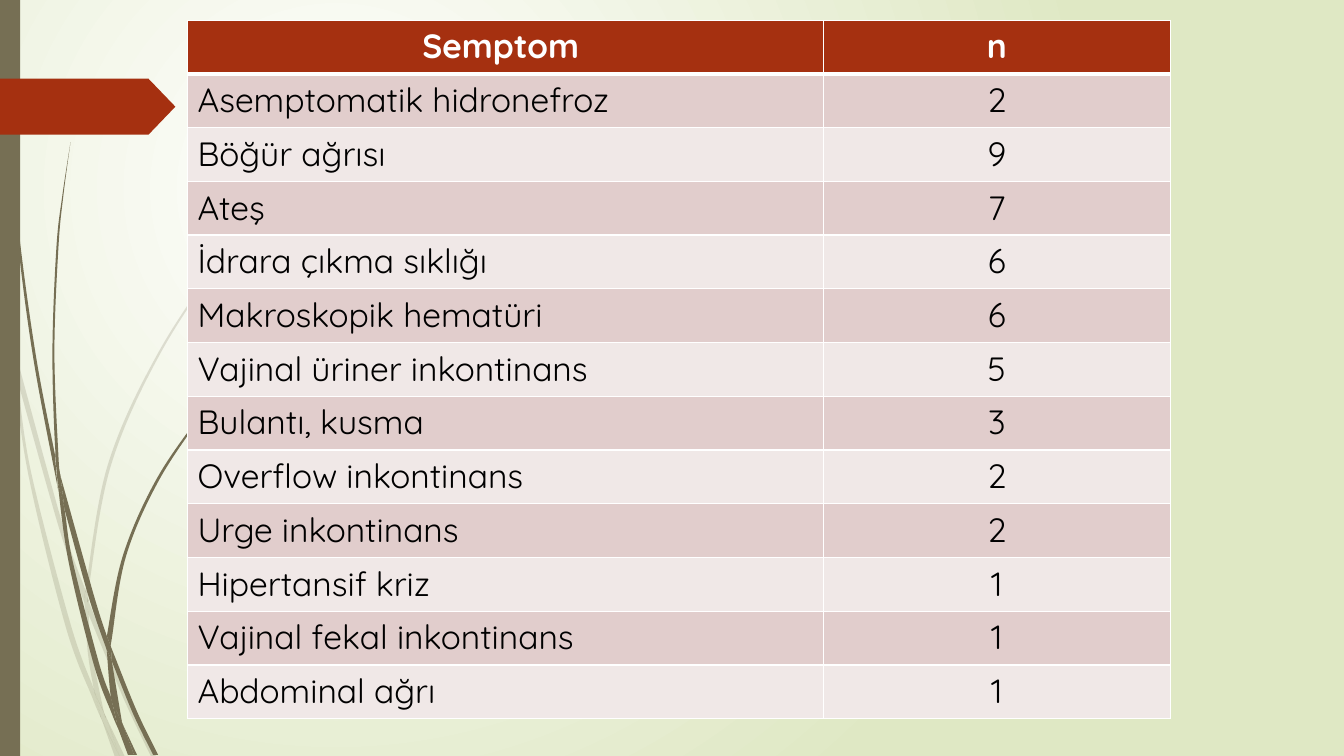
from lxml.etree import SubElement
from pptx import Presentation
from pptx.dml.color import RGBColor
from pptx.enum.shapes import MSO_SHAPE
from pptx.enum.text import PP_ALIGN
from pptx.oxml.ns import qn
from pptx.util import Pt

RECT, ARROW = MSO_SHAPE.RECTANGLE, MSO_SHAPE.PENTAGON
LEFT, CENTER = PP_ALIGN.LEFT, PP_ALIGN.CENTER
UNIT = 0.72

COLORS = {
    "white": "FFFFFF", "black": "000000", "green": "DFE8C4",
    "olive": "766F54", "rust": "A53010", "rose": "E1CDCC", "pale": "F0E8E7",
}
ROWS = [
    ("Semptom ", "n"),
    ("Asemptomatik hidronefroz", "2"),
    ("Böğür ağrısı", "9"),
    ("Ateş", "7"),
    ("İdrara çıkma sıklığı", "6"),
    ("Makroskopik hematüri", "6"),
    ("Vajinal üriner inkontinans", "5"),
    ("Bulantı, kusma", "3"),
    ("Overflow inkontinans", "2"),
    ("Urge inkontinans", "2"),
    ("Hipertansif kriz", "1"),
    ("Vajinal fekal inkontinans", "1"),
    ("Abdominal ağrı", "1"),
]
FAINT = [
    [[(0, 282), (9, 322), (11, 350)], [(10, 344), (0, 299)], [(0, 282)]],
    [[(14, 345), (17, 376)], [(58, 522), (84, 599)], [(85, 586)], [(62, 520), (14, 345)]],
    [[(88, 596), (88, 610)], [(123, 694), (150, 751)], [(155, 751)],
     [(127, 692), (92, 607), (88, 596)]],
    [[(105, 711), (119, 751)], [(124, 751)], [(105, 711)]],
    [[(11, 350), (28, 470), (65, 621), (92, 693), (101, 714)], [(99, 707), (93, 683)],
     [(70, 619), (31, 469), (17, 376), (11, 350)]],
    [[(84, 599), (87, 646), (93, 683), (96, 692), (105, 711)],
     [(103, 706), (91, 646), (88, 610), (88, 608)], [(84, 599)]],
    [[(312, 153), (289, 175), (268, 197), (228, 244), (158, 348), (107, 461), (85, 584),
      (85, 586)], [(88, 596)],
     [(88, 584), (110, 462), (160, 349), (229, 245), (268, 198), (290, 175), (312, 154)],
     [(312, 153)]],
    [[(101, 714), (114, 751)], [(119, 751)], [(101, 714)]],
    [[(88, 608), (88, 610)], [(88, 596)], [(85, 586)], [(84, 599)], [(88, 608)]],
    [[(93, 683), (99, 707), (101, 714), (119, 751)], [(105, 711), (96, 692), (93, 683)]],
]
SOLID = [
    [[(3, 0), (4, 48), (7, 110), (17, 233), (33, 355), (56, 477), (57, 481)],
     [(55, 457), (55, 453)], [(36, 355), (19, 232), (8, 109), (5, 48), (4, 0)], [(3, 0)]],
    [[(60, 472), (64, 505)], [(88, 592), (106, 645)], [(106, 633), (106, 631)],
     [(93, 590), (60, 472)]],
    [[(110, 641), (111, 656)], [(132, 708), (152, 749)], [(157, 749)],
     [(136, 706), (113, 649), (110, 641)]],
    [[(57, 477), (68, 557), (93, 659), (111, 708), (117, 722)], [(116, 717), (110, 691)],
     [(98, 657), (72, 556), (64, 505), (57, 477)]],
    [[(70, 141), (62, 193), (56, 245), (52, 349), (55, 449), (60, 472)],
     [(58, 453), (54, 349), (58, 245), (63, 193), (70, 141)]],
    [[(122, 719), (133, 749)], [(136, 749)], [(122, 719)]],
    [[(55, 449), (55, 453), (57, 477)], [(64, 505)], [(60, 472)], [(55, 449)]],
    [[(260, 344), (245, 358), (231, 373), (204, 405), (156, 474), (122, 551), (106, 631)],
     [(110, 641)], [(111, 633), (125, 552), (158, 476), (205, 406), (231, 374), (245, 359),
                    (261, 344)], [(260, 344)]],
    [[(117, 722), (127, 749)], [(131, 749)], [(117, 722)]],
    [[(106, 645), (110, 691), (116, 706), (122, 719)], [(121, 716), (111, 656)],
     [(109, 651), (106, 645)]],
    [[(106, 631), (106, 645)], [(109, 651), (111, 656)], [(110, 641)], [(106, 631)]],
    [[(110, 691), (116, 717), (117, 722), (130, 749)], [(133, 749)],
     [(122, 719), (116, 706), (110, 691)]],
]


def bend(knots):
    """Return the Bezier points of a smooth curve after its first knot."""
    ends = [knots[0], *knots, knots[-1]]
    dots = []
    for a, b, c, d in zip(ends, ends[1:], ends[2:], ends[3:]):
        dots.append([q + (r - p) / 6 for p, q, r in zip(a, b, c)])
        dots.append([q - (r - p) / 6 for p, q, r in zip(b, c, d)])
        dots.append(c)
    return dots


class Deck:
    """Hold the style and the current slide."""

    def __init__(self, font, size):
        """Start a deck with one blank slide."""
        self.font, self.size = font, size
        self.deck = Presentation()
        self.deck.slide_width, self.deck.slide_height = Pt(960), Pt(540)
        self.slide = self.deck.slides.add_slide(self.deck.slide_layouts[6])

    def color(self, name):
        """Look up a colour."""
        return RGBColor.from_string(COLORS[name])

    def back(self, inner, outer):
        """Set a round gradient as the background."""
        fill = self.slide.background.fill
        fill.gradient()
        for stop, name, place in zip(fill.gradient_stops, (inner, outer), (0, 1)):
            stop.color.rgb, stop.position = self.color(name), place
        grad = next(self.slide.element.iter(qn("a:gradFill")))
        grad.remove(grad.find(qn("a:lin")))
        ring = SubElement(grad, qn("a:path"), path="circle")
        SubElement(ring, qn("a:fillToRect"), l="50000", t="50000", r="100000", b="100000")

    def paint(self, shape, name, alpha=100):
        """Give a shape a flat fill without line or shadow."""
        shape.shadow.inherit = False
        shape.line.fill.background()
        shape.fill.solid()
        shape.fill.fore_color.rgb = self.color(name)
        if alpha < 100:
            tint = next(shape.element.spPr.iter(qn("a:srgbClr")))
            SubElement(tint, qn("a:alpha"), val=str(alpha * 1000))

    def shape(self, kind, box, name):
        """Add a preset shape."""
        shape = self.slide.shapes.add_shape(kind, *map(Pt, box))
        self.paint(shape, name)
        return shape

    def blade(self, edges, name, alpha):
        """Add a closed outline of smooth edges that meet at corners."""
        dots = [edges[0][0]]
        dots += bend(edges[0])
        for edge in edges[1:]:
            dots += bend([dots[-1], *edge])
        dots = [(Pt(x * UNIT), Pt(y * UNIT)) for x, y in dots]
        form = self.slide.shapes.build_freeform(*dots[0])
        form.add_line_segments(dots[1:])
        shape = form.convert_to_shape()
        track = next(shape.element.iter(qn("a:path")))
        lines = track.findall(qn("a:lnTo"))
        count = len(dots) // 3 * 3
        for i in range(0, count, 3):
            curve = SubElement(track, qn("a:cubicBezTo"))
            lines[i].addprevious(curve)
            for line in lines[i:i + 3]:
                curve.append(line[0])
                track.remove(line)
        self.paint(shape, name, alpha)

    def cell(self, cell, text, align, fill, ink, head, rims):
        """Fill and format one table cell."""
        props = cell._tc.get_or_add_tcPr()
        for side, width in rims.items():
            line = SubElement(props, qn("a:ln" + side), w=str(Pt(width)))
            paint = SubElement(line, qn("a:solidFill"))
            SubElement(paint, qn("a:srgbClr"), val=COLORS["white"])
        cell.fill.solid()
        cell.fill.fore_color.rgb = self.color(fill)
        cell.text = text
        para = cell.text_frame.paragraphs[0]
        para.alignment = align
        font = para.font
        font.name, font.size, font.bold = self.font, Pt(self.size), head
        font.color.rgb = self.color(ink)

    def table(self, rows, left, top, widths, height):
        """Add a banded table with a header row."""
        frame = self.slide.shapes.add_table(
            len(rows), len(widths), Pt(left), Pt(top), Pt(sum(widths)), Pt(height * len(rows)))
        table = frame.table
        for col, width in zip(table.columns, widths):
            col.width = Pt(width)
        for i, row in enumerate(rows):
            table.rows[i].height = Pt(height)
            head = i == 0
            fill = "rust" if head else ("pale", "rose")[i % 2]
            ink = "white" if head else "black"
            rims = {"L": 1, "R": 1, "T": 3 if i == 1 else 1, "B": 3 if head else 1}
            for j, text in enumerate(row):
                align = CENTER if head or j else LEFT
                self.cell(table.cell(i, j), text, align, fill, ink, head, rims)


def main():
    """Build and save the slide."""
    deck = Deck("Quicksand", 24)
    deck.back("white", "green")
    for blades, alpha in ((FAINT, 20), (SOLID, 100)):
        for edges in blades:
            deck.blade(edges, "olive", alpha)
    deck.shape(RECT, (0, 0, 14.4, 540), "olive")
    arrow = deck.shape(ARROW, (0, 56.2, 125.3, 40), "rust")
    arrow.adjustments[0] = 0.48
    deck.table(ROWS, 133.9, 14.4, (454.3, 247.7), 38.4)
    deck.deck.save("out.pptx")


if __name__ == "__main__":
    main()
